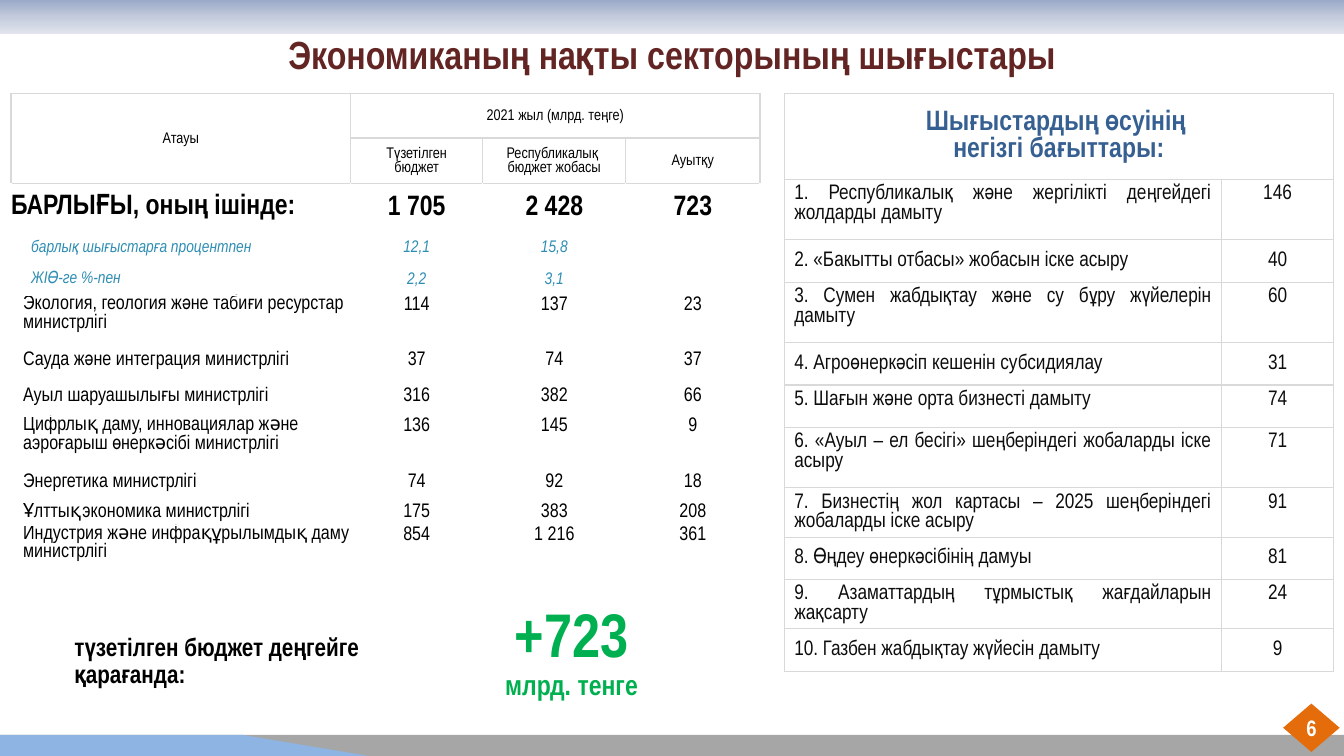
"""Builds the slide on spending in the real sector of the economy."""
import copy
from dataclasses import dataclass

import pptx
import pptx.dml.color
import pptx.enum.shapes
import pptx.enum.text
import pptx.oxml
import pptx.oxml.ns
import pptx.util

ALIGN = pptx.enum.text.PP_ALIGN
ANCHOR = pptx.enum.text.MSO_ANCHOR
SHAPE = pptx.enum.shapes.MSO_SHAPE
GRID_COLUMNS, GRID_ROWS = 160, 90
SLIDE_WIDTH, SLIDE_HEIGHT = pptx.util.Inches(13.33), pptx.util.Inches(7.5)
BOX_INSETS = (0.1, 0.05, 0.1, 0.05)
NUMBER_INSETS = (0.01, 0.01, 0.01, 0)


@dataclass(frozen=True)
class Theme:
    """Holds the font, colours and type sizes of the slide."""
    font: str = "Arial Narrow"
    maroon: str = "632523"
    navy: str = "376092"
    teal: str = "2F8DB3"
    green: str = "00B050"
    orange: str = "E46C0A"
    sky: str = "8EB4E3"
    grey: str = "A6A6A6"
    rule: str = "D9D9D9"
    ink: str = "0D0D0D"
    black: str = "000000"
    white: str = "FFFFFF"
    band: tuple = ("9BAAC9", "C3CBDC", "E2E5ED")
    title: int = 28
    figure: int = 44
    heading: int = 20
    label: int = 18
    badge: int = 16
    direction: int = 15
    ministry: int = 14
    share: int = 12
    header: int = 11
    box_spacing: float = 0.9
    table_spacing: float = 1.0


THEME = Theme()

BUDGET_COLUMNS = (40.44, 15.72, 17.04, 15.96)
BUDGET_ROWS = (5.28, 5.4, 5.76, 3.72, 3.72, 5.88, 3.72, 4.8, 5.88, 3.96, 3.12, 5.88)
BUDGET = (
    ("Атауы", "2021 жыл (млрд. теңге)", "", ""),
    ("", "Түзетілген\vбюджет", "Республикалық \nбюджет жобасы", "Ауытқу"),
    ("БАРЛЫҒЫ, оның ішінде:", "1 705", "2 428", "723"),
    ("барлық шығыстарға процентпен", "12,1", "15,8", ""),
    ("ЖІӨ-ге %-пен", "2,2", "3,1", ""),
    ("Экология, геология және табиғи ресурстар министрлігі", "114", "137", "23"),
    ("Сауда және интеграция министрлігі", "37", "74", "37"),
    ("Ауыл шаруашылығы министрлiгi", "316", "382", "66"),
    ("Цифрлық даму, инновациялар жəне аэроғарыш өнеркəсібі министрлігі", "136", "145", "9"),
    ("Энергетика министрлігі", "74", "92", "18"),
    ("Ұлттық экономика министрлігі", "175", "383", "208"),
    ("Индустрия жəне инфрақұрылымдық даму министрлігі", "854", "1 216", "361"),
)
TOP_MINISTRIES = (5, 8, 11)

DIRECTION_COLUMNS = (52.08, 13.32)
DIRECTION_ROWS = (10.2, 7.2, 5.04, 7.2, 5.04, 5.04, 7.2, 5.04, 5.04, 5.04, 5.04)
DIRECTIONS = (
    ("Шығыстардың өсуінің \nнегізгі бағыттары:", ""),
    ("1. Республикалық және жергілікті деңгейдегі жолдарды дамыту", "146"),
    ("2. «Бакытты отбасы» жобасын іске асыру", "40"),
    ("3. Сумен жабдықтау және су бұру жүйелерін дамыту", "60"),
    ("4. Агроөнеркәсіп кешенін субсидиялау", "31"),
    ("5. Шағын және орта бизнесті дамыту", "74"),
    ("6. «Ауыл – ел бесігі» шеңберіндегі жобаларды іске асыру", "71"),
    ("7. Бизнестің жол картасы – 2025 шеңберіндегі жобаларды іске асыру", "91"),
    ("8. Өңдеу өнеркәсібінің дамуы", "81"),
    ("9. Азаматтардың тұрмыстық жағдайларын жақсарту", "24"),
    ("10. Газбен жабдықтау жүйесін дамыту", "9"),
)
MIDDLE_DIRECTIONS = (0, 2, 4, 8, 10)


def across(columns):
    """Turn grid columns into a length."""
    return int(SLIDE_WIDTH * columns / GRID_COLUMNS)


def down(rows):
    """Turn grid rows into a length."""
    return int(SLIDE_HEIGHT * rows / GRID_ROWS)


def place(left, top, width, height):
    """Turn a grid area into slide lengths."""
    return across(left), down(top), across(width), down(height)


def assign(target, values):
    """Set every named format value on the target."""
    for name, value in values.items():
        setattr(target, name, value)


def insets(values):
    """Name the four insets, given in inches."""
    sides = ("margin_left", "margin_top", "margin_right", "margin_bottom")
    return {side: pptx.util.Inches(value) for side, value in zip(sides, values)}


def write(frame, text, sizes, color, align=ALIGN.CENTER, spacing=THEME.box_spacing, bold=False, italic=False):
    """Write one paragraph per line, with one type size for each."""
    lines = text.split("\n")
    for number, line in enumerate(lines):
        paragraph = frame.paragraphs[0] if number == 0 else frame.add_paragraph()
        paragraph.text = line
        assign(paragraph, {"alignment": align, "line_spacing": spacing})
        size = pptx.util.Pt(sizes[min(number, len(sizes) - 1)])
        for run in paragraph.runs:
            assign(run.font, {"name": THEME.font, "size": size, "bold": bold, "italic": italic})
            run.font.color.rgb = pptx.dml.color.RGBColor.from_string(color)


def fill_box(box, text, sizes, color, **style):
    """Format a text frame and write bold text in it."""
    assign(box.text_frame, {"word_wrap": True, "vertical_anchor": ANCHOR.MIDDLE,
                            "auto_size": pptx.enum.text.MSO_AUTO_SIZE.NONE, **insets(BOX_INSETS)})
    write(box.text_frame, text, sizes, color, bold=True, **style)


def add_title(slide, text, area):
    """Move the title placeholder and write the title."""
    title = slide.shapes.title
    assign(title, dict(zip(("left", "top", "width", "height"), place(*area))))
    fill_box(title, text, (THEME.title,), THEME.maroon)


def add_block(slide, kind, area, color=None):
    """Add an unoutlined preset shape, filled when a colour is given."""
    block = slide.shapes.add_shape(kind, *place(*area))
    block.shadow.inherit = False
    block.line.fill.background()
    if color:
        block.fill.solid()
        block.fill.fore_color.rgb = pptx.dml.color.RGBColor.from_string(color)
    return block


def add_band(slide, area, colors):
    """Add a band that shades downward through three colours."""
    band = add_block(slide, SHAPE.RECTANGLE, area)
    band.fill.gradient()
    band.fill.gradient_angle = 270
    first = band._element.spPr.find(".//" + pptx.oxml.ns.qn("a:gs"))
    first.addnext(copy.deepcopy(first))
    for stop, color, position in zip(band.fill.gradient_stops, colors, (0, 0.5, 1)):
        stop.color.rgb = pptx.dml.color.RGBColor.from_string(color)
        stop.position = position


def rule_cell(cell, color, top):
    """Draw the four borders of a cell and leave it unfilled."""
    borders = cell._tc.get_or_add_tcPr()
    for side, tint in (("L", color), ("R", color), ("T", top), ("B", color)):
        borders.append(pptx.oxml.parse_xml(
            f'<a:ln{side} {pptx.oxml.ns.nsdecls("a")} w="12700"><a:solidFill>'
            f'<a:srgbClr val="{tint}"/></a:solidFill></a:ln{side}>'))
    cell.fill.background()


def add_grid(slide, left, top, columns, rows, content, style_cell):
    """Add a table whose cells are formatted by the given rule."""
    area = place(left, top, sum(columns), sum(rows))
    table = slide.shapes.add_table(len(rows), len(columns), *area).table
    assign(table, {"first_row": False, "horz_banding": False})
    for column, width in zip(table.columns, columns):
        column.width = across(width)
    for row, height in zip(table.rows, rows):
        row.height = down(height)
    for row, texts in enumerate(content):
        for column, text in enumerate(texts):
            cell = table.cell(row, column)
            margins, middle, borders, style = style_cell(row, column)
            anchor = ANCHOR.MIDDLE if middle else ANCHOR.TOP
            assign(cell, {"vertical_anchor": anchor, **insets(margins)})
            write(cell.text_frame, text, spacing=THEME.table_spacing, **style)
            rule_cell(cell, *borders)
    return table


def style_budget(row, column):
    """Give the format of one budget cell."""
    size, color, indent = THEME.ministry, THEME.black, 0.12
    if row < 2:
        size = THEME.header
    elif row == 2:
        size, indent = THEME.heading, 0
    elif row < 5:
        size, color, indent = THEME.share, THEME.teal, 0.2
    named = column == 0 and row > 1
    borders = (THEME.rule if row < 2 else THEME.white, THEME.rule if row < 3 else THEME.white)
    style = {"sizes": (size,), "color": color, "bold": row == 2, "italic": row in (3, 4),
             "align": ALIGN.LEFT if named else ALIGN.CENTER}
    return (indent, 0, 0, 0) if named else NUMBER_INSETS, row not in TOP_MINISTRIES, borders, style


def style_direction(row, column):
    """Give the format of one growth direction cell."""
    heading = row == 0
    style = {"sizes": (THEME.heading if heading else THEME.direction,), "bold": heading,
             "color": THEME.navy if heading else THEME.ink,
             "align": ALIGN.CENTER if heading or column else ALIGN.JUSTIFY}
    return BOX_INSETS, row in MIDDLE_DIRECTIONS, (THEME.rule, THEME.rule), style


def main():
    """Build and save the slide."""
    deck = pptx.Presentation()
    assign(deck, {"slide_width": SLIDE_WIDTH, "slide_height": SLIDE_HEIGHT})
    slide = deck.slides.add_slide(deck.slide_layouts[5])
    add_title(slide, "Экономиканың нақты секторының шығыстары", (0, 3.36, 160, 6.72))

    budget = add_grid(slide, 1.32, 11.16, BUDGET_COLUMNS, BUDGET_ROWS, BUDGET, style_budget)
    budget.cell(0, 0).merge(budget.cell(1, 0))
    budget.cell(0, 1).merge(budget.cell(0, 3))
    directions = add_grid(slide, 93.36, 11.16, DIRECTION_COLUMNS, DIRECTION_ROWS, DIRECTIONS, style_direction)
    directions.cell(0, 0).merge(directions.cell(0, 1))

    increase = slide.shapes.add_textbox(*place(56.04, 72.24, 24, 10.92))
    fill_box(increase, "+723\nмлрд. тенге", (THEME.figure, THEME.heading), THEME.green)
    comparison = slide.shapes.add_textbox(*place(7.68, 74.4, 42.6, 8.76))
    fill_box(comparison, "түзетілген бюджет деңгейге қарағанда:", (THEME.label,), THEME.black, align=ALIGN.LEFT)

    add_block(slide, SHAPE.RECTANGLE, (0, 87.48, 160, 2.52), THEME.grey)
    add_band(slide, (-0.24, 0, 160.32, 4.08), THEME.band)
    add_block(slide, SHAPE.RECTANGLE, (0, 87.48, 28.92, 2.52), THEME.sky)
    add_block(slide, SHAPE.RIGHT_TRIANGLE, (28.8, 87.48, 15.12, 2.52), THEME.sky)
    badge = add_block(slide, SHAPE.FLOWCHART_DECISION, (152.76, 83.76, 6.72, 5.76), THEME.orange)
    fill_box(badge, "6", (THEME.badge,), THEME.white, spacing=1.0)
    assign(badge.text_frame, insets((0, 0, 0, 0)))
    deck.save("out.pptx")


if __name__ == "__main__":
    main()
